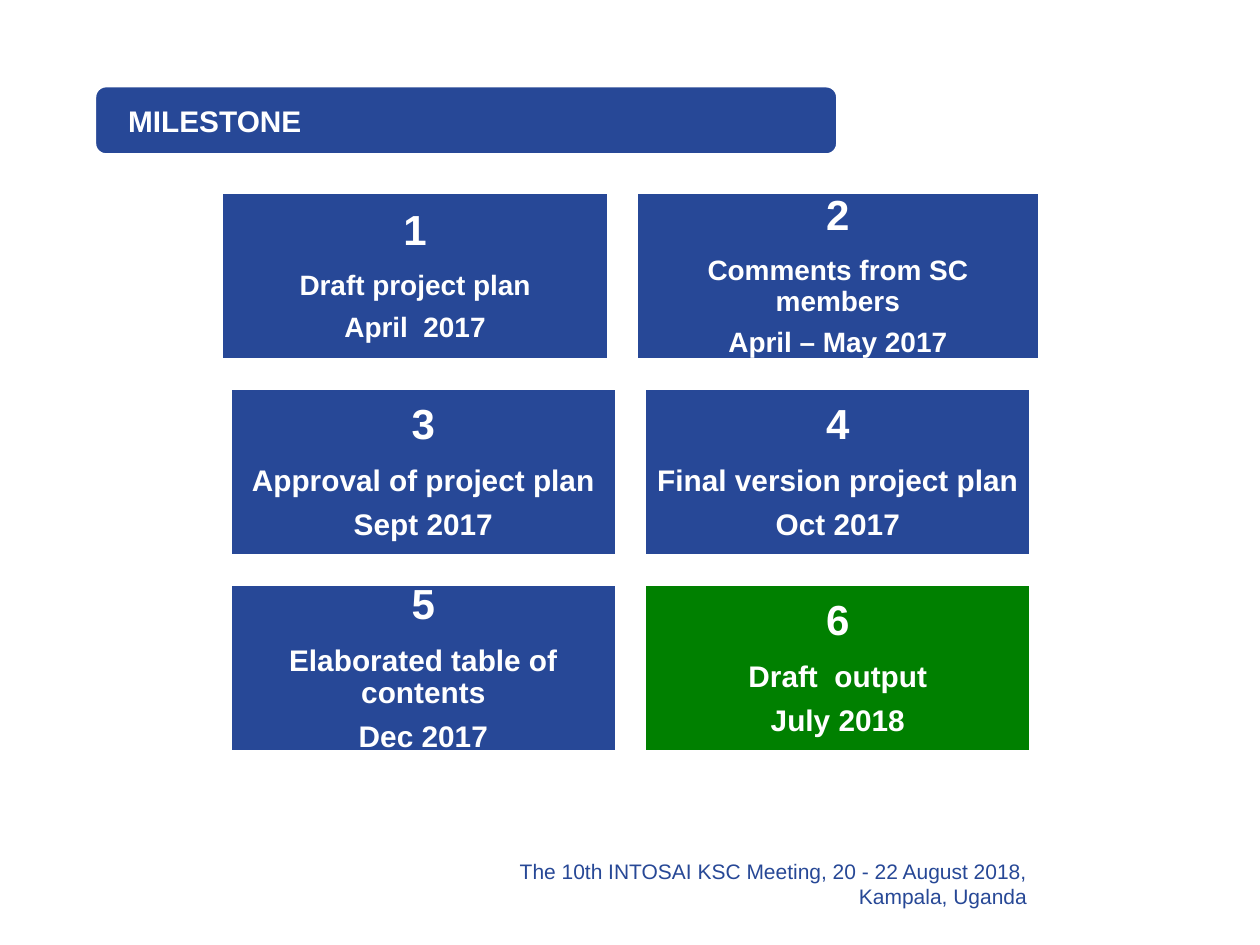
from dataclasses import dataclass

from pptx import Presentation
from pptx.dml.color import RGBColor
from pptx.enum.shapes import MSO_SHAPE
from pptx.enum.text import MSO_ANCHOR, PP_ALIGN
from pptx.util import Inches, Pt


@dataclass(frozen=True)
class Theme:
    font: str = "Arial"
    blue: RGBColor = RGBColor(0x27, 0x48, 0x97)
    footer_blue: RGBColor = RGBColor(0x27, 0x48, 0x96)
    green: RGBColor = RGBColor(0x00, 0x80, 0x00)
    white: RGBColor = RGBColor(0xFF, 0xFF, 0xFF)
    title_size: int = 17
    number_size: int = 24
    footer_size: int = 12
    outline: int = 2
    line_spacing: float = 0.9
    space_after: float = 0.4


THEME = Theme()

MILESTONE_ROWS = [
    (16, [
        (3.07, THEME.blue, ["1", "Draft project plan", "April  2017"]),
        (3.2, THEME.blue, ["2", "Comments from SC members", "April – May 2017"]),
    ]),
    (17, [
        (3.07, THEME.blue, ["3", "Approval of project plan", "Sept 2017"]),
        (3.07, THEME.blue, ["4", "Final version project plan", "Oct 2017"]),
    ]),
    (17, [
        (3.07, THEME.blue, ["5", "Elaborated table of contents", "Dec 2017"]),
        (3.07, THEME.green, ["6", "Draft  output", "July 2018"]),
    ]),
]


def style_para(para, size, color, align, bold=True):
    para.alignment = align
    for span in para.runs:
        span.font.name = THEME.font
        span.font.size = Pt(size)
        span.font.bold = bold
        span.font.color.rgb = color


def add_panel(page, kind, left, top, width, height, fill, side_inset, end_inset):
    panel = page.shapes.add_shape(
        kind, Inches(left), Inches(top), Inches(width), Inches(height))
    panel.shadow.inherit = False
    panel.fill.solid()
    panel.fill.fore_color.rgb = fill
    panel.line.color.rgb = THEME.white
    panel.line.width = Pt(THEME.outline)
    frame = panel.text_frame
    frame.word_wrap = True
    frame.vertical_anchor = MSO_ANCHOR.MIDDLE
    frame.margin_left = frame.margin_right = Inches(side_inset)
    frame.margin_top = frame.margin_bottom = Inches(end_inset)
    return frame


def add_title(page, left, top, width, height):
    frame = add_panel(page, MSO_SHAPE.ROUNDED_RECTANGLE, left, top, width, height,
                      THEME.blue, 0.24, 0)
    frame.text = "MILESTONE"
    style_para(frame.paragraphs[0], THEME.title_size, THEME.white, PP_ALIGN.LEFT)


def add_card(page, left, top, width, height, fill, lines, text_size):
    frame = add_panel(page, MSO_SHAPE.RECTANGLE, left, top, width, height,
                      fill, 0.1, 0.1)
    frame.text = "\n".join(lines)
    sizes = [THEME.number_size, text_size, text_size]
    for para, size in zip(frame.paragraphs, sizes):
        style_para(para, size, THEME.white, PP_ALIGN.CENTER)
        para.line_spacing = THEME.line_spacing
        para.space_after = Pt(round(size * THEME.space_after, 1))


def add_milestones(page, left, top, width, height):
    card_height, column_gap = 1.33, 0.22
    row_pitch = (height - card_height) / (len(MILESTONE_ROWS) - 1)
    for row, (text_size, cards) in enumerate(MILESTONE_ROWS):
        row_width = sum(card[0] for card in cards) + column_gap * (len(cards) - 1)
        card_left = left + (width - row_width) / 2
        for card_width, fill, lines in cards:
            add_card(page, card_left, top + row * row_pitch, card_width,
                     card_height, fill, lines, text_size)
            card_left += card_width + column_gap


def add_footer(page, left, top, width, height):
    box = page.shapes.add_textbox(
        Inches(left), Inches(top), Inches(width), Inches(height))
    frame = box.text_frame
    frame.word_wrap = True
    frame.vertical_anchor = MSO_ANCHOR.MIDDLE
    frame.text = "The 10th INTOSAI KSC Meeting, 20 - 22 August 2018, Kampala, Uganda"
    style_para(frame.paragraphs[0], THEME.footer_size, THEME.footer_blue,
               PP_ALIGN.RIGHT, bold=False)


def main():
    deck = Presentation()
    deck.slide_width = Inches(10)
    deck.slide_height = Inches(7.5)
    page = deck.slides.add_slide(deck.slide_layouts[6])
    add_footer(page, 3.82, 6.82, 4.43, 0.39)
    add_title(page, 0.75, 0.68, 5.9, 0.55)
    add_milestones(page, 1.76, 1.53, 6.49, 4.44)
    deck.save("out.pptx")


if __name__ == "__main__":
    main()
